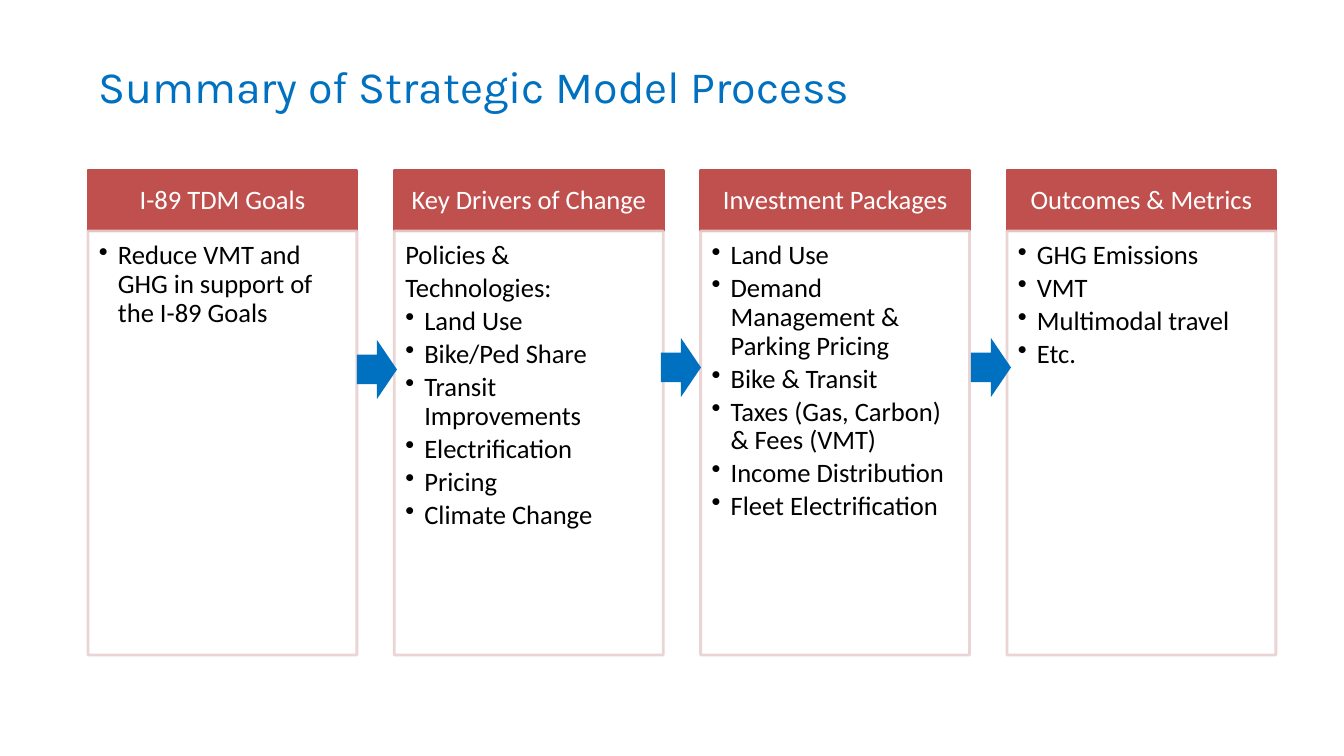
from lxml.etree import SubElement
from pptx import Presentation
from pptx.dml.color import RGBColor
from pptx.enum.shapes import MSO_SHAPE
from pptx.enum.text import MSO_ANCHOR, MSO_AUTO_SIZE, PP_ALIGN
from pptx.oxml.ns import qn
from pptx.util import Pt

# Content
TITLE = "Summary of Strategic Model Process"
# Each column: heading, plain lead-in lines, bulleted lines
COLUMNS = [
    ("I-89 TDM Goals", [], ["Reduce VMT and GHG in support of the I-89 Goals"]),
    ("Key Drivers of Change", ["Policies &", "Technologies:"],
     ["Land Use", "Bike/Ped Share", "Transit Improvements", "Electrification",
      "Pricing", "Climate Change"]),
    ("Investment Packages", [],
     ["Land Use", "Demand Management & Parking Pricing", "Bike & Transit",
      "Taxes (Gas, Carbon) & Fees (VMT)", "Income Distribution",
      "Fleet Electrification"]),
    ("Outcomes & Metrics", [],
     ["GHG Emissions", "VMT", "Multimodal travel", "Etc."]),
]
COLORS = {"blue": "0070C0", "red": "C0504D", "border": "E8D0D0",
          "white": "FFFFFF", "black": "000000"}

# Layout in px
EMU_PER_PX = 914400 / 100.8
SLIDE_WIDTH, SLIDE_HEIGHT = 1344, 756
FIRST_LEFT, LAST_LEFT, COLUMN_WIDTH = 88, 1007, 269
HEADER_TOP, HEADER_HEIGHT, BODY_HEIGHT = 170, 61, 424
ARROW_POSITIONS = [(357, 340), (661, 338), (971, 338)]
ARROW_SIZE = (40, 59)
HEADER_INSETS = (15, 8, 15, 8)
BODY_INSETS = (11, 11, 15, 17)
TITLE_INDENT, BULLET_INDENT = 70, 19


def px(length):
    return round(length * EMU_PER_PX)


def rgb(name):
    return RGBColor.from_string(COLORS[name])


def add_shape(kind, left, top, width, height, fill=None, line=None):
    shape = slide.shapes.add_shape(kind, px(left), px(top), px(width), px(height))
    shape.shadow.inherit = False
    if fill:
        shape.fill.solid()
        shape.fill.fore_color.rgb = rgb(fill)
    else:
        shape.fill.background()
    if line:
        shape.line.color.rgb = rgb(line)
        shape.line.width = Pt(2)
    else:
        shape.line.fill.background()
    return shape


def format_run(paragraph, font, size, color):
    for run in paragraph.runs:
        run.font.name = font
        run.font.size = Pt(size)
        run.font.color.rgb = rgb(color)


def write_text(shape, lines, insets, anchor, align, color, space_after):
    frame = shape.text_frame
    frame.word_wrap = True
    frame.vertical_anchor = anchor
    (frame.margin_left, frame.margin_top,
     frame.margin_right, frame.margin_bottom) = map(px, insets)
    frame.text = "\n".join(lines)
    for paragraph in frame.paragraphs:
        paragraph.alignment = align
        paragraph.line_spacing = 0.9
        paragraph.space_after = Pt(space_after)
        format_run(paragraph, "Calibri", 19, color)
    return frame.paragraphs


def set_indent(paragraph, left, first=0):
    properties = paragraph._p.get_or_add_pPr()
    properties.set("marL", str(px(left)))
    properties.set("indent", str(px(first)))
    return properties


presentation = Presentation()
presentation.slide_width, presentation.slide_height = px(SLIDE_WIDTH), px(SLIDE_HEIGHT)
slide = presentation.slides.add_slide(presentation.slide_layouts[5])

# Title
title = slide.shapes.title
title.left, title.top, title.width, title.height = map(px, (18, 33, 1189, 106))
title.text_frame.text = TITLE
title.text_frame.auto_size = MSO_AUTO_SIZE.NONE
title.text_frame.vertical_anchor = MSO_ANCHOR.MIDDLE
heading = title.text_frame.paragraphs[0]
heading.alignment = PP_ALIGN.LEFT
set_indent(heading, TITLE_INDENT)
format_run(heading, "Karla", 32, "blue")

# Columns: a red header above an outlined list
pitch = (LAST_LEFT - FIRST_LEFT) / (len(COLUMNS) - 1)
for index, (name, lead_lines, bullets) in enumerate(COLUMNS):
    left = FIRST_LEFT + index * pitch
    header = add_shape(MSO_SHAPE.RECTANGLE, left, HEADER_TOP,
                       COLUMN_WIDTH, HEADER_HEIGHT, "red", "red")
    write_text(header, [name], HEADER_INSETS, MSO_ANCHOR.MIDDLE,
               PP_ALIGN.CENTER, "white", 0)

    body = add_shape(MSO_SHAPE.RECTANGLE, left, HEADER_TOP + HEADER_HEIGHT,
                     COLUMN_WIDTH, BODY_HEIGHT, line="border")
    border_color = body.line._ln.find(".//" + qn("a:srgbClr"))
    SubElement(border_color, qn("a:alpha"), val="90000")
    paragraphs = write_text(body, lead_lines + bullets, BODY_INSETS,
                            MSO_ANCHOR.TOP, PP_ALIGN.LEFT, "black", 3)
    for position, paragraph in enumerate(paragraphs):
        properties = set_indent(paragraph, BULLET_INDENT, -BULLET_INDENT)
        if position < len(lead_lines):
            SubElement(properties, qn("a:buNone"))
        else:
            SubElement(properties, qn("a:buChar"), char="•")

# Arrows between the columns
for left, top in ARROW_POSITIONS:
    add_shape(MSO_SHAPE.RIGHT_ARROW, left, top, *ARROW_SIZE, fill="blue")

presentation.save("out.pptx")
